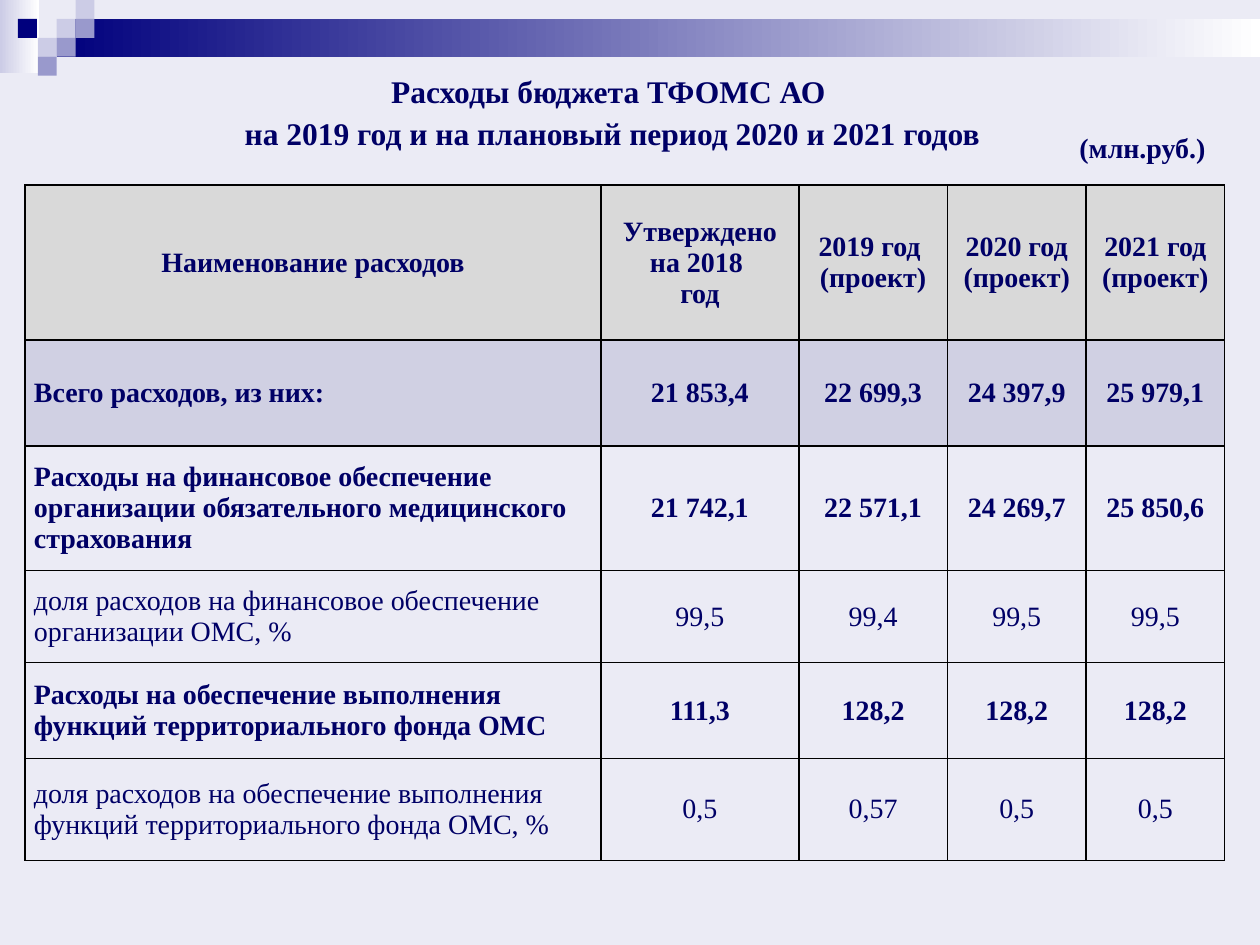
from lxml.etree import SubElement
from pptx import Presentation
from pptx.dml.color import RGBColor
from pptx.enum.shapes import MSO_SHAPE
from pptx.enum.text import MSO_ANCHOR, PP_ALIGN
from pptx.oxml.ns import qn
from pptx.util import Inches, Pt

FONT, INK = "Times New Roman", "000066"
NAVY, PALE, MID = "00007D", "CCCCE6", "9999CC"
UNIT = 0.15  # side of one square in the header band

COLS = [4.57, 1.57, 1.18, 1.1, 1.1]
ROWS = [1.23, 0.84, 0.99, 0.73, 0.76, 0.81]
FILLS = {0: "D9D9D9", 1: "D0D0E3"}
PLAIN = {3, 5}  # rows that are not bold
DATA = [
    ["Наименование расходов", "Утверждено на 2018 \nгод", "2019 год \n(проект)",
     "2020 год (проект)", "2021 год (проект)"],
    ["Всего расходов, из них:", "21 853,4", "22 699,3", "24 397,9", "25 979,1"],
    ["Расходы на финансовое обеспечение организации обязательного "
     "медицинского страхования", "21 742,1", "22 571,1", "24 269,7", "25 850,6"],
    ["доля расходов на финансовое обеспечение организации ОМС, %",
     "99,5", "99,4", "99,5", "99,5"],
    ["Расходы на обеспечение выполнения функций территориального фонда ОМС",
     "111,3", "128,2", "128,2", "128,2"],
    ["доля расходов на обеспечение выполнения функций территориального "
     "фонда ОМС, %", "0,5", "0,57", "0,5", "0,5"],
]


def color(code):
    return RGBColor.from_string(code)


def style(frame, size, bold=True, align=PP_ALIGN.CENTER):
    for para in frame.paragraphs:
        para.alignment = align
        for run in para.runs:
            font = run.font
            font.name, font.size, font.bold = FONT, Pt(size), bold
            font.color.rgb = color(INK)


def block(slide, box, *codes):
    """Rectangle with one colour, or a left-to-right gradient of two."""
    shape = slide.shapes.add_shape(MSO_SHAPE.RECTANGLE, *map(Inches, box))
    shape.shadow.inherit = False
    shape.line.fill.background()
    if len(codes) == 1:
        shape.fill.solid()
        shape.fill.fore_color.rgb = color(codes[0])
        return
    shape.fill.gradient()
    shape.fill.gradient_angle = 0
    for stop, code, place in zip(shape.fill.gradient_stops, codes, (0, 1)):
        stop.color.rgb = color(code)
        stop.position = place


def add_band(slide, width):
    block(slide, (0, 0, 0.31, 0.58), PALE, "FFFFFF")
    block(slide, (3 * UNIT, UNIT, width - 3 * UNIT, 2 * UNIT), NAVY, "FFFFFF")
    # Squares as column, row, colour
    for col, row, code in [(3, 1, PALE), (4, 0, PALE), (4, 1, MID), (2, 2, PALE),
                           (0.95, 1, NAVY), (3, 2, MID), (2, 3, MID)]:
        block(slide, (col * UNIT, row * UNIT, UNIT, UNIT), code)


def add_title(slide, box):
    title = slide.shapes.title
    title.left, title.top, title.width, title.height = map(Inches, box)
    frame = title.text_frame
    frame.text = ("Расходы бюджета ТФОМС АО \v"
                  "на 2019 год и на плановый период 2020 и 2021 годов")
    frame.vertical_anchor = MSO_ANCHOR.MIDDLE
    frame.paragraphs[0].line_spacing = 1.1
    style(frame, 18)


def add_note(slide, box):
    frame = slide.shapes.add_textbox(*map(Inches, box)).text_frame
    frame.word_wrap = True
    frame.text = "(млн.руб.) "
    style(frame, 16)


def add_edges(cell):
    props = cell._tc.get_or_add_tcPr()
    for at, side in enumerate(("a:lnL", "a:lnR", "a:lnT", "a:lnB")):
        line = SubElement(props, qn(side), w=str(Pt(1)))
        fill = SubElement(line, qn("a:solidFill"))
        SubElement(fill, qn("a:srgbClr"), val="000000")
        props.insert(at, line)


def add_grid(slide, left, top):
    size = (left, top, sum(COLS), sum(ROWS))
    table = slide.shapes.add_table(len(ROWS), len(COLS), *map(Inches, size)).table
    for col, width in zip(table.columns, COLS):
        col.width = Inches(width)
    for row, height in zip(table.rows, ROWS):
        row.height = Inches(height)
    for r, texts in enumerate(DATA):
        for c, text in enumerate(texts):
            cell = table.cell(r, c)
            cell.text_frame.text = text
            cell.vertical_anchor = MSO_ANCHOR.MIDDLE
            cell.margin_left = cell.margin_right = Inches(0.07)
            cell.margin_top = cell.margin_bottom = 0
            label = c == 0 and r > 0
            style(cell.text_frame, 16, r not in PLAIN,
                  PP_ALIGN.LEFT if label else PP_ALIGN.CENTER)
            if r in FILLS:
                cell.fill.solid()
                cell.fill.fore_color.rgb = color(FILLS[r])
            else:
                cell.fill.background()
            add_edges(cell)


def main():
    deck = Presentation()
    deck.slide_width, deck.slide_height = Inches(10), Inches(7.5)
    slide = deck.slides.add_slide(deck.slide_layouts[5])
    back = slide.background.fill
    back.solid()
    back.fore_color.rgb = color("EBEBF5")
    add_band(slide, 10)
    add_title(slide, (0, 0.52, 9.72, 0.71))
    add_grid(slide, 0.2, 1.47)
    add_note(slide, (8.19, 0.99, 1.81, 0.37))
    deck.save("out.pptx")


if __name__ == "__main__":
    main()
